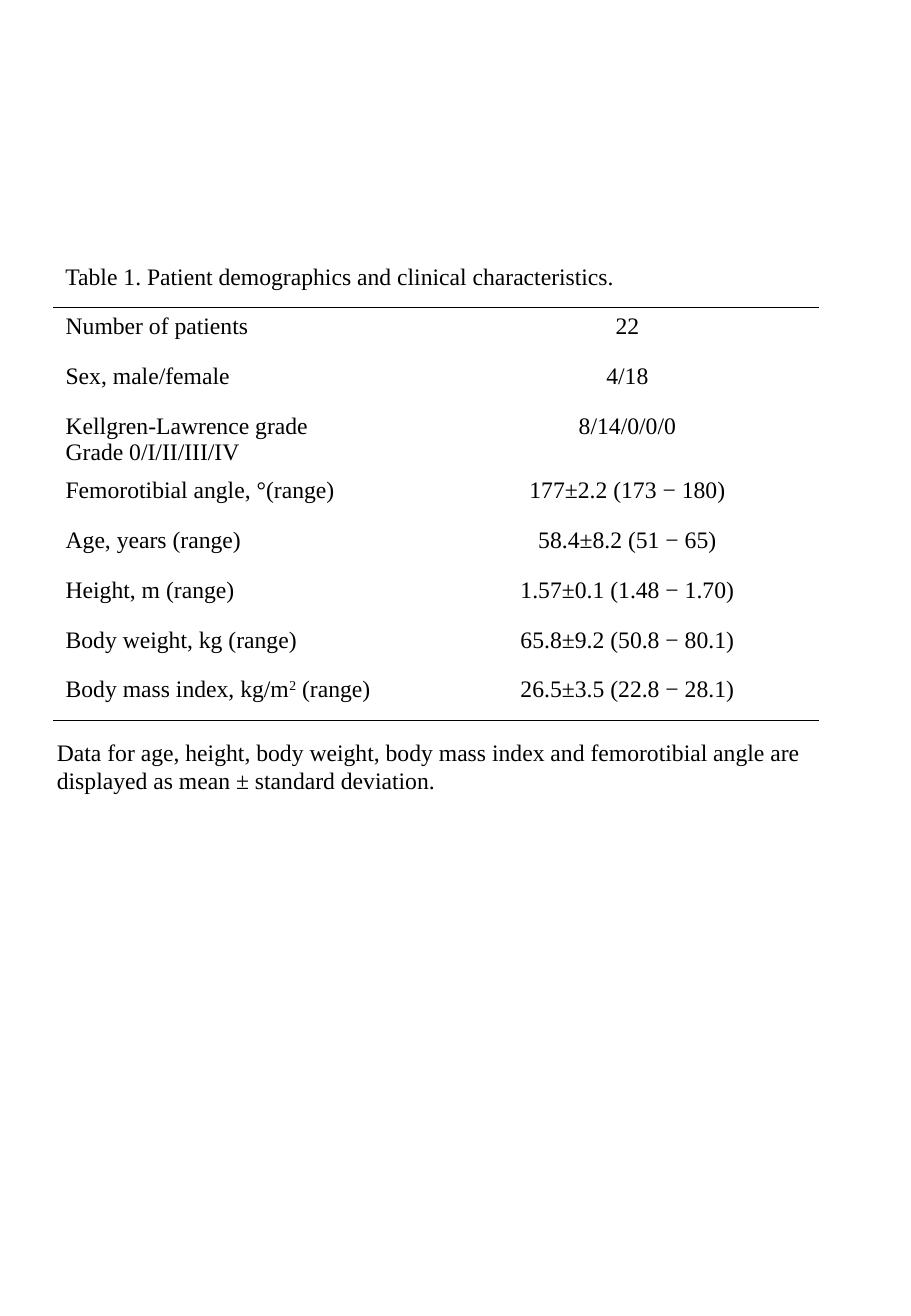
from lxml import etree
from pptx import Presentation, util as u
from pptx.dml.color import RGBColor
from pptx.enum import text
from pptx.oxml import ns

BLACK = RGBColor(0, 0, 0)
FONT, SIZE = "Times New Roman", u.Pt(14)
PLAIN_TABLE = "{2D5ABB26-0587-4C30-8999-92F81FD0307C}"  # no style, no grid
ROW_HEIGHT = u.Inches(0.41)

TITLE = "Table 1. Patient demographics and clinical characteristics."
FOOTNOTE = ("Data for age, height, body weight, body mass index and femorotibial "
            "angle are displayed as mean ± standard deviation.")
# A caret encloses superscript text
CHARACTERISTICS = [
    ("Number of patients", "22"),
    ("Sex, male/female", "4/18"),
    ("Kellgren-Lawrence grade\nGrade 0/I/II/III/IV", "8/14/0/0/0"),
    ("Femorotibial angle, °(range)", "177±2.2 (173 − 180)"),
    ("Age, years (range)", "58.4±8.2 (51 − 65)"),
    ("Height, m (range)", "1.57±0.1 (1.48 − 1.70)"),
    ("Body weight, kg (range)", "65.8±9.2 (50.8 − 80.1)"),
    ("Body mass index, kg/m^2^ (range)", "26.5±3.5 (22.8 − 28.1)"),
]


def write(frame, content, align=text.PP_ALIGN.LEFT):
    for number, line in enumerate(content.split("\n")):
        paragraph = frame.add_paragraph() if number else frame.paragraphs[0]
        paragraph.alignment = align
        paragraph.font.name, paragraph.font.size = FONT, SIZE
        paragraph.font.color.rgb = BLACK
        for part, words in enumerate(line.split("^")):
            run = paragraph.add_run()
            run.text = words
            if part % 2:
                run.font._element.set("baseline", "30000")


def add_rule(cell, side):
    """Draw a 1 pt border on one side of a cell: lnT or lnB."""
    border = etree.Element(ns.qn(f"a:{side}"), w=str(u.Pt(1)))
    fill = etree.SubElement(border, ns.qn("a:solidFill"))
    etree.SubElement(fill, ns.qn("a:srgbClr"), val=str(BLACK))
    cell._tc.get_or_add_tcPr().insert(0, border)


def add_caption(slide, box, content):
    frame = slide.shapes.add_textbox(*box).text_frame
    frame.word_wrap = True
    frame.auto_size = text.MSO_AUTO_SIZE.SHAPE_TO_FIT_TEXT
    write(frame, content)


def add_demographics(slide, left, top, width):
    last = len(CHARACTERISTICS) - 1
    table = slide.shapes.add_table(last + 1, 2, left, top, width,
                                   ROW_HEIGHT * (last + 1)).table
    table.first_row = table.horz_banding = False
    table._tbl.tblPr.find(ns.qn("a:tableStyleId")).text = PLAIN_TABLE
    aligns = (text.PP_ALIGN.LEFT, text.PP_ALIGN.CENTER)
    for row, entries in enumerate(CHARACTERISTICS):
        for column, (entry, align) in enumerate(zip(entries, aligns)):
            cell = table.cell(row, column)
            cell.fill.background()
            write(cell.text_frame, entry, align)
            # Rules above the first row and below the last
            if row == 0:
                add_rule(cell, "lnT")
            if row == last:
                add_rule(cell, "lnB")


def main():
    deck = Presentation()
    deck.slide_width, deck.slide_height = u.Inches(7.5), u.Inches(10.83)
    slide = deck.slides.add_slide(deck.slide_layouts[6])
    left, caption_width = u.Inches(0.44), u.Inches(6.93)
    add_demographics(slide, left, u.Inches(2.53), u.Inches(6.3))
    add_caption(slide, (u.Inches(0.37), u.Inches(6.02), caption_width, u.Inches(0.57)),
                FOOTNOTE)
    add_caption(slide, (left, u.Inches(2.11), caption_width, u.Inches(0.34)), TITLE)
    deck.save("out.pptx")


if __name__ == "__main__":
    main()
